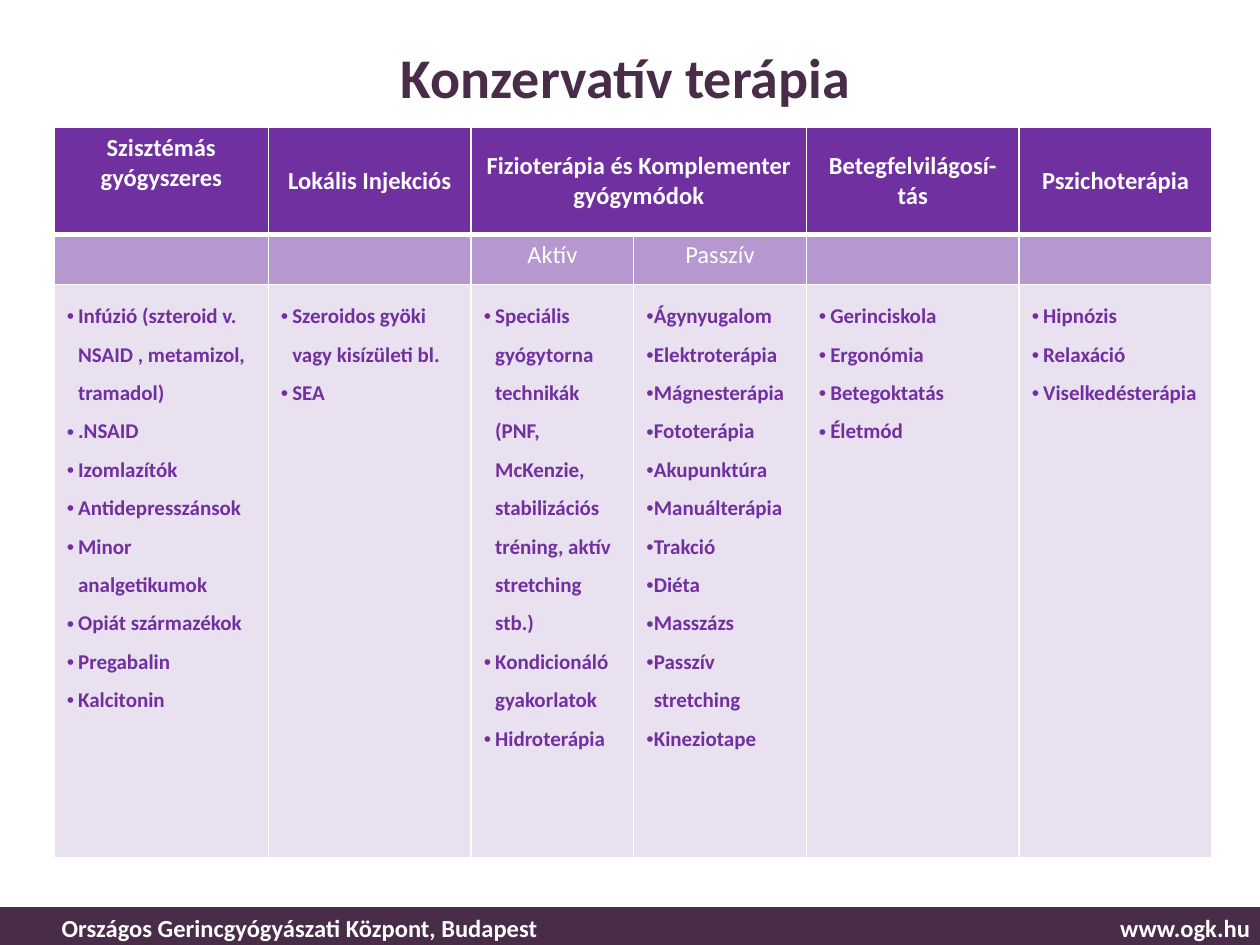
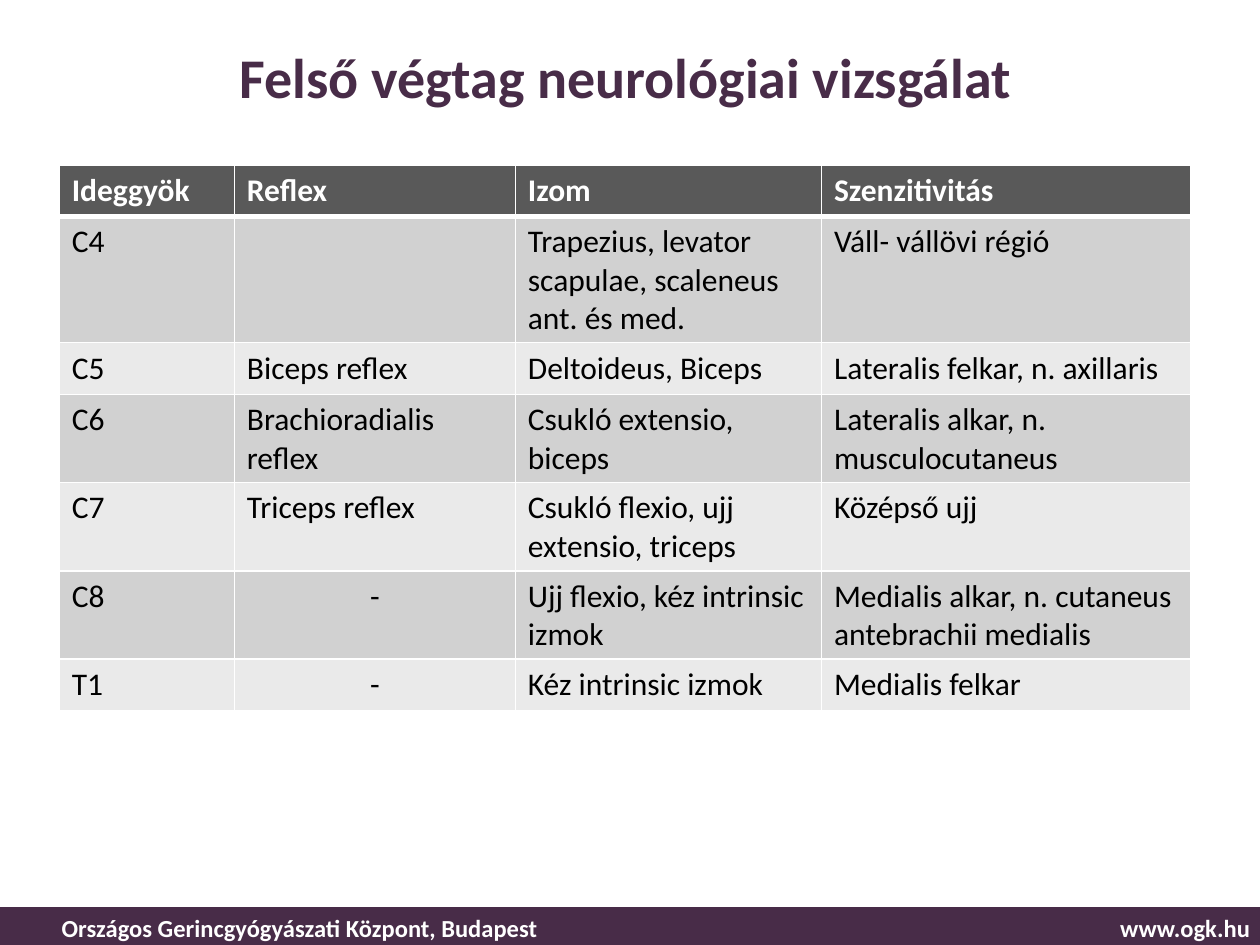
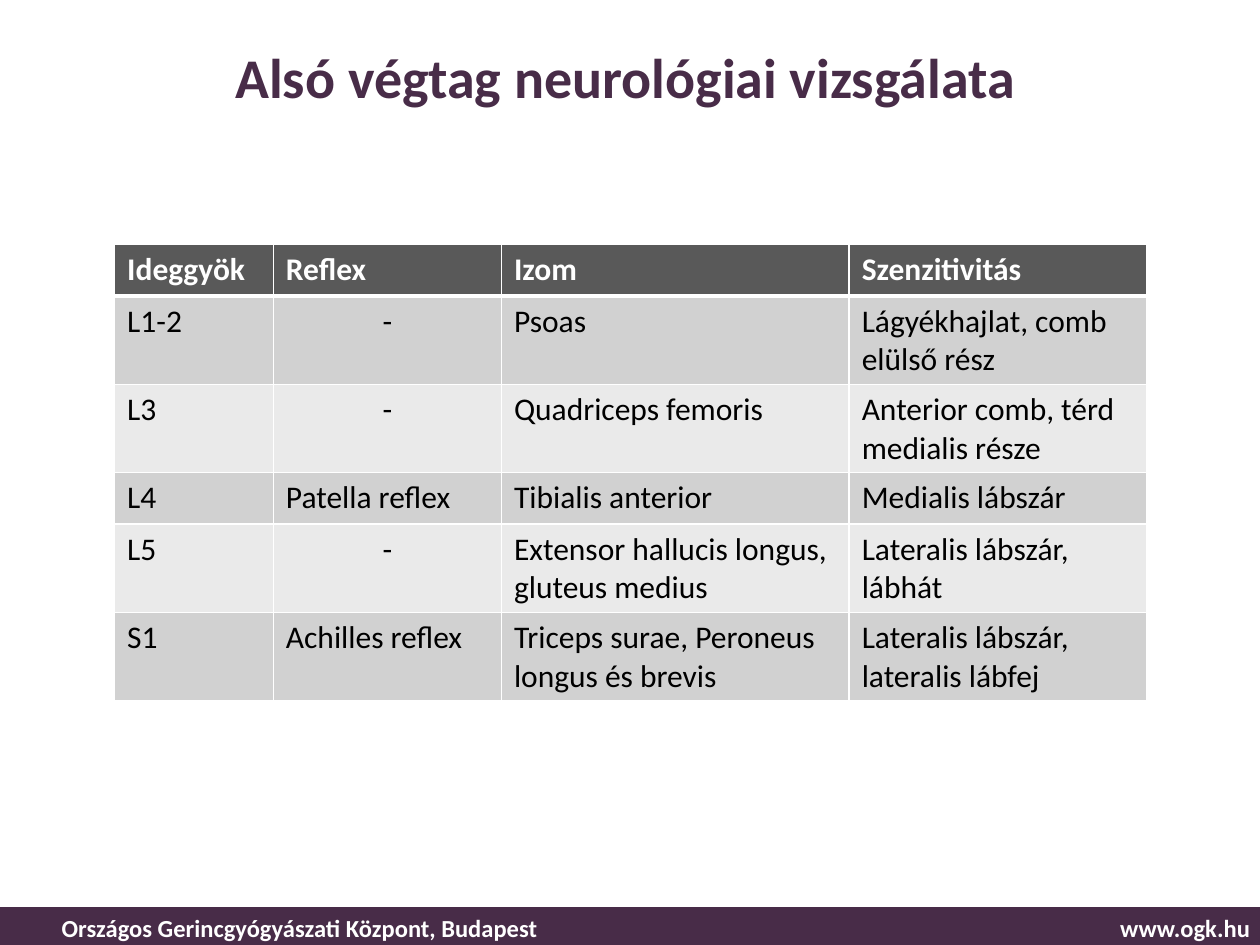
from dataclasses import dataclass

from lxml.etree import SubElement
from pptx import Presentation
from pptx.dml.color import RGBColor
from pptx.enum.shapes import MSO_SHAPE
from pptx.enum.text import MSO_ANCHOR, PP_ALIGN
from pptx.oxml.ns import qn
from pptx.util import Inches, Pt


@dataclass(frozen=True)
class Theme:
    font: str = "Calibri"
    plum: str = "482C48"
    purple: str = "7030A0"
    white: str = "FFFFFF"
    black: str = "000000"
    head_gray: str = "595959"
    band_grays: tuple = ("D1D1D1", "EAEAEA")
    title_size: int = 32
    exam_size: int = 18
    label_size: int = 14
    list_size: int = 12
    thin_line: int = 1
    head_line: int = 3


THEME = Theme()
HANG = 0.09
TIGHT_HANG = 0.06

# Conservative therapy: (heading, columns covered, anchor)
THERAPY_HEADINGS = [
    ("Szisztémás gyógyszeres", 1, MSO_ANCHOR.TOP),
    ("Lokális Injekciós", 1, MSO_ANCHOR.MIDDLE),
    ("Fizioterápia és Komplementer gyógymódok", 2, MSO_ANCHOR.MIDDLE),
    ("Betegfelvilágosí-tás", 1, MSO_ANCHOR.MIDDLE),
    ("Pszichoterápia", 1, MSO_ANCHOR.MIDDLE),
]
THERAPY_KINDS = ["", "", "Aktív", "Passzív", "", ""]
# (hanging indent, list items); \v is a line break within an item
THERAPY_LISTS = [
    (HANG, ["Infúzió (szteroid v.\vNSAID , metamizol,\vtramadol)", ".NSAID",
            "Izomlazítók", "Antidepresszánsok", "Minor\vanalgetikumok",
            "Opiát származékok", "Pregabalin", "Kalcitonin"]),
    (HANG, ["Szeroidos gyöki\vvagy kisízületi bl.", "SEA"]),
    (HANG, ["Speciális gyógytorna technikák (PNF, McKenzie, stabilizációs "
            "tréning, aktív stretching stb.)",
            "Kondicionáló gyakorlatok", "Hidroterápia"]),
    (TIGHT_HANG, ["Ágynyugalom", "Elektroterápia", "Mágnesterápia",
                  "Fototerápia", "Akupunktúra", "Manuálterápia", "Trakció",
                  "Diéta", "Masszázs", "Passzív\vstretching", "Kineziotape"]),
    (HANG, ["Gerinciskola", "Ergonómia", "Betegoktatás", "Életmód"]),
    (HANG, ["Hipnózis", "Relaxáció", "Viselkedésterápia"]),
]

# Neurological examinations
EXAM_HEADINGS = ["Ideggyök", "Reflex", "Izom", "Szenzitivitás"]
UPPER_LIMB = [
    ["C4", "", "Trapezius, levator scapulae, scaleneus ant. és med.",
     "Váll- vállövi régió"],
    ["C5", "Biceps reflex", "Deltoideus, Biceps",
     "Lateralis felkar, n. axillaris"],
    ["C6", "Brachioradialis reflex", "Csukló extensio, biceps",
     "Lateralis alkar, n. musculocutaneus"],
    ["C7", "Triceps reflex", "Csukló flexio, ujj extensio, triceps",
     "Középső ujj"],
    ["C8", "-", "Ujj flexio, kéz intrinsic izmok",
     "Medialis alkar, n. cutaneus antebrachii medialis"],
    ["T1", "-", "Kéz intrinsic izmok", "Medialis felkar"],
]
LOWER_LIMB = [
    ["L1-2", "-", "Psoas", "Lágyékhajlat, comb elülső rész"],
    ["L3", "-", "Quadriceps femoris", "Anterior comb, térd medialis része"],
    ["L4", "Patella reflex", "Tibialis anterior", "Medialis lábszár"],
    ["L5", "-", "Extensor hallucis longus, gluteus medius",
     "Lateralis lábszár, lábhát"],
    ["S1", "Achilles reflex", "Triceps surae, Peroneus longus és brevis",
     "Lateralis lábszár, lateralis lábfej"],
]


# Text
def style(paragraph, size, color, bold=False, align=PP_ALIGN.LEFT):
    paragraph.alignment = align
    font = paragraph.font
    font.name, font.size, font.bold = THEME.font, Pt(size), bold
    font.color.rgb = RGBColor.from_string(color)


def add_bullet(paragraph, hang):
    props = paragraph._p.get_or_add_pPr()
    props.set("marL", str(Inches(hang)))
    props.set("indent", str(-Inches(hang)))
    SubElement(props, qn("a:buFont"), typeface="Arial")
    SubElement(props, qn("a:buChar"), char="•")


# Slide frame: title, band and footer
def add_footer_text(slide, text, left, width, align):
    box = slide.shapes.add_textbox(Inches(left), Inches(7.19),
                                   Inches(width), Inches(0.34))
    frame = box.text_frame
    frame.word_wrap = True
    frame.vertical_anchor = MSO_ANCHOR.MIDDLE
    frame.text = text
    style(frame.paragraphs[0], THEME.label_size, THEME.white, True, align)


def add_framed_slide(prs, heading):
    slide = prs.slides.add_slide(prs.slide_layouts[5])
    band = slide.shapes.add_shape(MSO_SHAPE.RECTANGLE, 0, Inches(7.2),
                                  prs.slide_width, Inches(0.3))
    band.shadow.inherit = False
    band.fill.solid()
    band.fill.fore_color.rgb = RGBColor.from_string(THEME.plum)
    band.line.fill.background()
    add_footer_text(slide, "Országos Gerincgyógyászati Központ, Budapest",
                    0.39, 6.9, PP_ALIGN.LEFT)
    add_footer_text(slide, "www.ogk.hu", 7.36, 2.66, PP_ALIGN.RIGHT)

    title = slide.shapes.title
    title.left, title.top = Inches(0.28), Inches(0.29)
    title.width, title.height = Inches(9.37), Inches(0.63)
    title.text_frame.vertical_anchor = MSO_ANCHOR.MIDDLE
    title.text = heading
    style(title.text_frame.paragraphs[0], THEME.title_size, THEME.plum, True,
          PP_ALIGN.CENTER)
    return slide


# Tables
def add_grid(slide, left, top, widths, heights):
    table = slide.shapes.add_table(
        len(heights), len(widths), Inches(left), Inches(top),
        Inches(sum(widths)), Inches(sum(heights))).table
    for column, width in zip(table.columns, widths):
        column.width = Inches(width)
    for row, height in zip(table.rows, heights):
        row.height = Inches(height)
    return table


def paint_cell(cell, row, fill, opacity=100):
    """White rules, heavier under the heading row, and a solid fill."""
    props = cell._tc.get_or_add_tcPr()
    heavy_side = {0: "lnB", 1: "lnT"}.get(row)
    for side in ("lnL", "lnR", "lnT", "lnB"):
        points = THEME.head_line if side == heavy_side else THEME.thin_line
        line = SubElement(props, qn(f"a:{side}"), w=str(Pt(points)))
        SubElement(SubElement(line, qn("a:solidFill")), qn("a:srgbClr"),
                   val=THEME.white)
    cell.fill.solid()
    cell.fill.fore_color.rgb = RGBColor.from_string(fill)
    if opacity < 100:
        color = props.find(qn("a:solidFill")).find(qn("a:srgbClr"))
        SubElement(color, qn("a:alpha"), val=str(opacity * 1000))


def write_cell(cell, text, size, color, bold=False, align=PP_ALIGN.LEFT):
    cell.text = text
    style(cell.text_frame.paragraphs[0], size, color, bold, align)


def write_list(cell, hang, items):
    cell.text = "\n".join(items)
    for paragraph in cell.text_frame.paragraphs:
        paragraph.line_spacing = 1.5
        add_bullet(paragraph, hang)
        style(paragraph, THEME.list_size, THEME.purple, True)


def add_therapy_table(slide):
    table = add_grid(slide, 0.43, 1.01, [1.7, 1.61, 1.29, 1.37, 1.69, 1.53],
                     [0.85, 0.4, 4.55])
    for row, opacity in enumerate((100, 50, 15)):
        for cell in table.rows[row].cells:
            paint_cell(cell, row, THEME.purple, opacity)

    column = 0
    for heading, span, anchor in THERAPY_HEADINGS:
        cell = table.cell(0, column)
        if span > 1:
            cell.merge(table.cell(0, column + span - 1))
        cell.vertical_anchor = anchor
        write_cell(cell, heading, THEME.label_size, THEME.white, True,
                   PP_ALIGN.CENTER)
        column += span

    for column, kind in enumerate(THERAPY_KINDS):
        write_cell(table.cell(1, column), kind, THEME.label_size, THEME.white,
                   align=PP_ALIGN.CENTER)
        write_list(table.cell(2, column), *THERAPY_LISTS[column])


def add_exam_table(slide, left, top, widths, findings):
    rows = [EXAM_HEADINGS] + findings
    table = add_grid(slide, left, top, widths, [0.41] * len(rows))
    for r, texts in enumerate(rows):
        is_head = r == 0
        fill = THEME.head_gray if is_head else THEME.band_grays[(r - 1) % 2]
        color = THEME.white if is_head else THEME.black
        for cell, text in zip(table.rows[r].cells, texts):
            paint_cell(cell, r, fill)
            align = PP_ALIGN.CENTER if text == "-" else PP_ALIGN.LEFT
            write_cell(cell, text, THEME.exam_size, color, is_head, align)


def main():
    prs = Presentation()
    prs.slide_width, prs.slide_height = Inches(10), Inches(7.5)

    add_therapy_table(add_framed_slide(prs, "Konzervatív terápia"))

    upper = add_framed_slide(prs, "Felső végtag neurológiai vizsgálat")
    add_exam_table(upper, 0.47, 1.31, [1.39, 2.23, 2.43, 2.93], UPPER_LIMB)

    lower = add_framed_slide(prs, "Alsó végtag neurológiai vizsgálata")
    add_exam_table(lower, 0.91, 1.94, [1.26, 1.81, 2.76, 2.36], LOWER_LIMB)

    prs.save("out.pptx")


if __name__ == "__main__":
    main()
